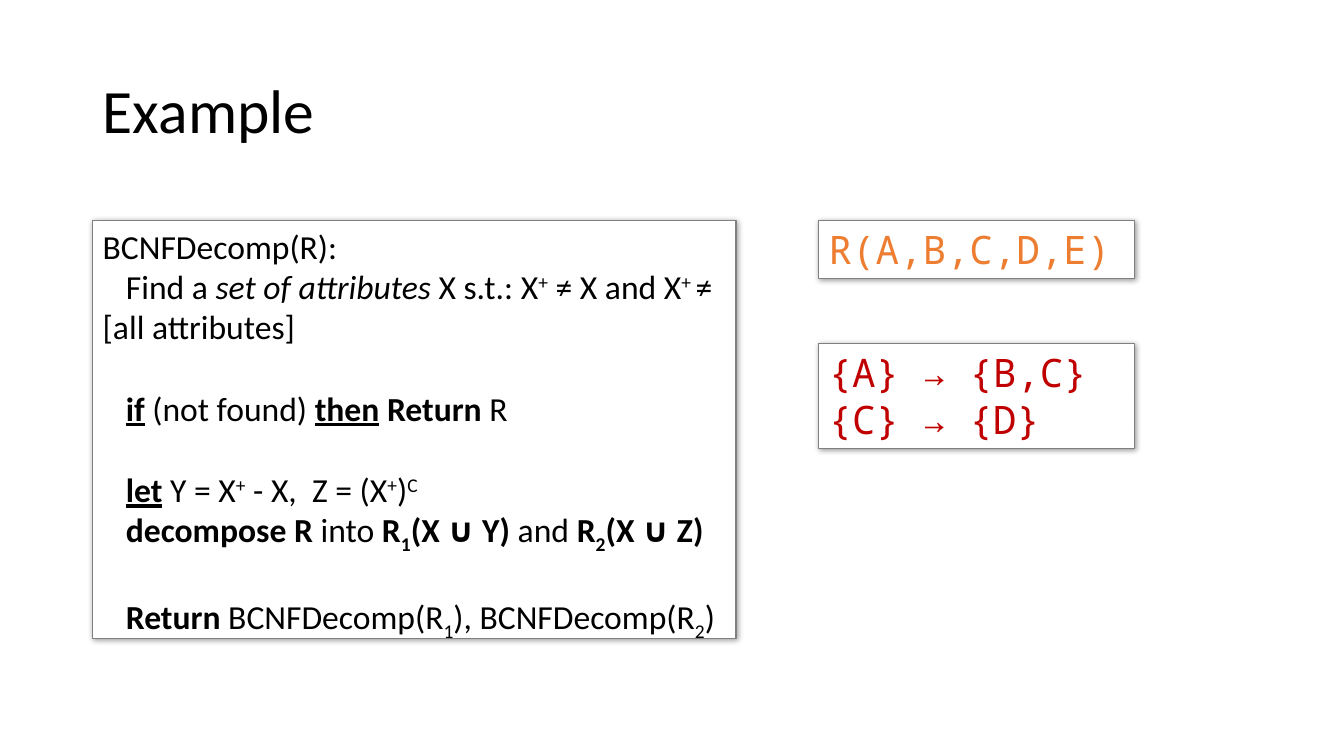
import pptx
import pptx.dml.color
import pptx.enum.shapes
import pptx.enum.text
import pptx.oxml
import pptx.oxml.ns
import pptx.util
from pptx.util import Inches

SHADOW_XML = (
    f'<a:effectLst {pptx.oxml.ns.nsdecls("a")}>'
    '<a:outerShdw blurRad="50800" dist="12700" dir="2700000" algn="tl" rotWithShape="0">'
    '<a:srgbClr val="000000"><a:alpha val="40000"/></a:srgbClr>'
    '</a:outerShdw></a:effectLst>'
)

# Run styles
PLAIN = {}
BOLD = {"bold": True}
ITALIC = {"italic": True}
KEYWORD = {"bold": True, "underline": True}
SUPERSCRIPT = {"baseline": 30}
SUBSCRIPT = {"baseline": -25}
BOLD_SUBSCRIPT = {"bold": True, "baseline": -25}


def color(hex_string):
    return pptx.dml.color.RGBColor.from_string(hex_string)


def set_attributes(target, values):
    for name, value in values.items():
        setattr(target, name, value)


class SlideBuilder:
    text_font = "Calibri"
    code_font = "Noto Sans Mono"
    black, white, gray = "000000", "FFFFFF", "808080"
    orange, red = "ED7D31", "C00000"
    blank_line = pptx.util.Pt(29.3)
    code_indent = Inches(0.23)

    def __init__(self, presentation):
        self.slide = presentation.slides.add_slide(presentation.slide_layouts[5])

    def add_run(self, paragraph, text, font, size, hex_color, style):
        run = paragraph.add_run()
        run.text = text
        values = {"name": font, "size": pptx.util.Pt(size), **style}
        baseline = values.pop("baseline", None)
        set_attributes(run.font, values)
        run.font.color.rgb = color(hex_color)
        if baseline:
            run.font._element.set("baseline", str(baseline * 1000))

    def title(self, text, left, top, width, height):
        title = self.slide.shapes.title
        set_attributes(title, {"left": Inches(left), "top": Inches(top),
                               "width": Inches(width), "height": Inches(height)})
        title.text_frame.vertical_anchor = pptx.enum.text.MSO_ANCHOR.MIDDLE
        paragraph = title.text_frame.paragraphs[0]
        set_attributes(paragraph, {"alignment": pptx.enum.text.PP_ALIGN.LEFT,
                                   "line_spacing": 0.9})
        self.add_run(paragraph, text, self.text_font, 44, self.black, PLAIN)

    def box(self, lines, left, top, width, height, font, size, hex_color):
        """Each line is (indented, blank line before, runs)."""
        shape = self.slide.shapes.add_shape(
            pptx.enum.shapes.MSO_SHAPE.RECTANGLE,
            Inches(left), Inches(top), Inches(width), Inches(height))
        shape.fill.solid()
        shape.fill.fore_color.rgb = color(self.white)
        shape.line.color.rgb = color(self.gray)
        shape.line.width = pptx.util.Pt(0.75)
        shape._element.spPr.append(pptx.oxml.parse_xml(SHADOW_XML))
        frame = shape.text_frame
        set_attributes(frame, {
            "word_wrap": True,
            "auto_size": pptx.enum.text.MSO_AUTO_SIZE.SHAPE_TO_FIT_TEXT,
            "vertical_anchor": pptx.enum.text.MSO_ANCHOR.TOP})
        for index, (indented, gap_before, runs) in enumerate(lines):
            paragraph = frame.add_paragraph() if index else frame.paragraphs[0]
            paragraph.alignment = pptx.enum.text.PP_ALIGN.LEFT
            if gap_before:
                paragraph.space_before = self.blank_line
            if indented:
                paragraph._p.get_or_add_pPr().set("indent", str(self.code_indent))
            for text, style in runs:
                self.add_run(paragraph, text, font, size, hex_color, style)

    def code_box(self, texts, top, height, hex_color):
        lines = [(False, False, [(text, PLAIN)]) for text in texts]
        self.box(lines, 8.12, top, 3.13, height, self.code_font, 28, hex_color)


ALGORITHM = [
    (False, False, [("BCNFDecomp(R):", PLAIN)]),
    (True, False, [("Find a ", PLAIN), ("set of attributes ", ITALIC),
                   ("X s.t.: X", PLAIN), ("+", SUPERSCRIPT),
                   (" ≠ X and X", PLAIN), ("+ ", SUPERSCRIPT),
                   ("≠ [all attributes]", PLAIN)]),
    (True, True, [("if", KEYWORD), (" (not found) ", PLAIN), ("then", KEYWORD),
                  (" ", PLAIN), ("Return", BOLD), (" R", PLAIN)]),
    (True, True, [("let", KEYWORD), (" Y = X", PLAIN), ("+", SUPERSCRIPT),
                  (" - X,  Z = (X", PLAIN), ("+", SUPERSCRIPT), (")", PLAIN),
                  ("C", SUPERSCRIPT)]),
    (True, False, [("decompose R", BOLD), (" into ", PLAIN),
                   ("R", BOLD), ("1", BOLD_SUBSCRIPT), ("(X ∪ Y) ", BOLD),
                   ("and ", PLAIN),
                   ("R", BOLD), ("2", BOLD_SUBSCRIPT), ("(X ∪ Z)", BOLD)]),
    (True, True, [("Return ", BOLD), ("BCNFDecomp(R", PLAIN), ("1", SUBSCRIPT),
                  ("), BCNFDecomp(R", PLAIN), ("2", SUBSCRIPT), (")", PLAIN)]),
]


def main():
    presentation = pptx.Presentation()
    presentation.slide_width = Inches(13.33)
    presentation.slide_height = Inches(7.5)
    builder = SlideBuilder(presentation)

    # Title
    builder.title("Example", 0.92, 0.4, 11.5, 1.45)

    # Decomposition algorithm
    builder.box(ALGORITHM, 0.92, 2.19, 6.38, 4.14,
                builder.text_font, 24, builder.black)

    # Relation and its functional dependencies
    builder.code_box(["R(A,B,C,D,E)"], 2.19, 0.57, builder.orange)
    builder.code_box(["{A} → {B,C}", "{C} → {D}"], 3.41, 1.04, builder.red)

    presentation.save("out.pptx")


if __name__ == "__main__":
    main()
